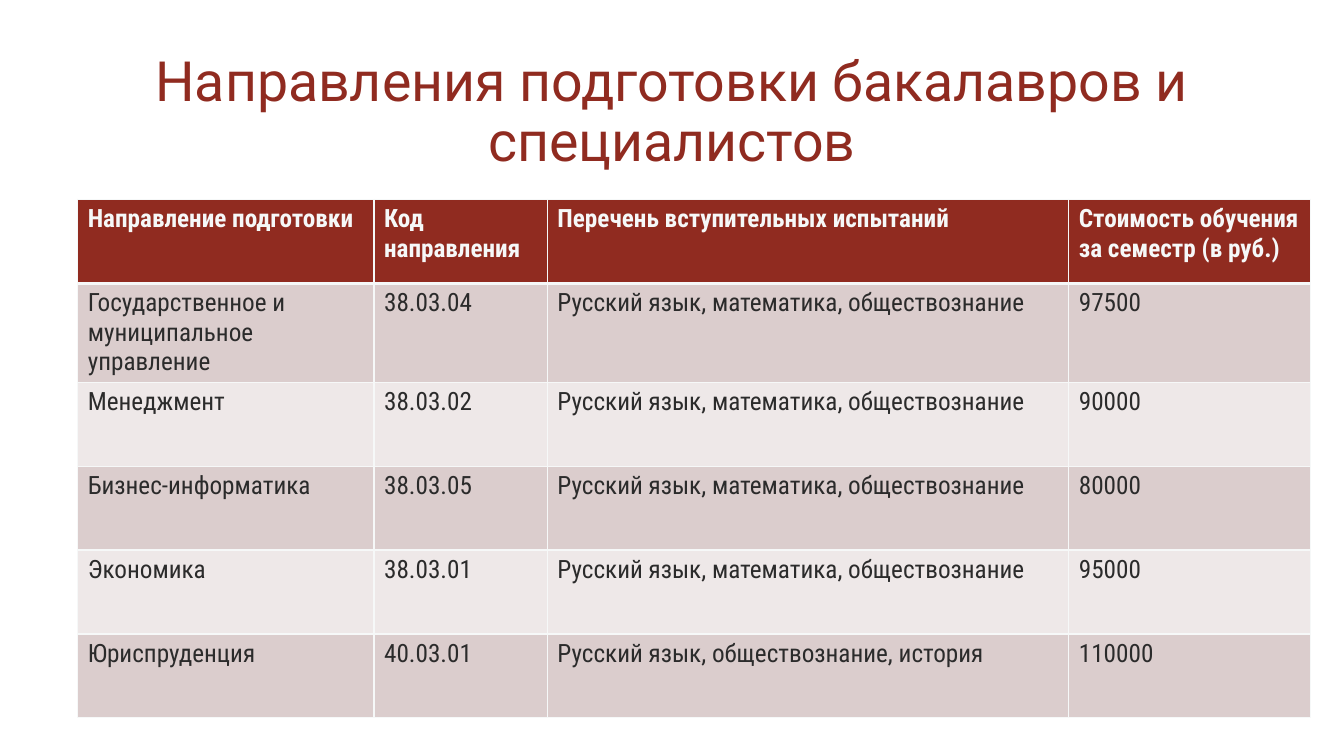
from pptx import Presentation, util as u
from pptx.dml.color import RGBColor
from pptx.enum import text
from pptx.oxml import parse_xml
from pptx.oxml.ns import nsdecls

HUES = {"red": "902B20", "pale": "F6F8F8", "ink": "2B2B2B",
        "rose": "DBCDCD", "mist": "EEE8E8"}

EXAMS = "Русский язык, математика, обществознание"
HEADS = ["Направление подготовки", "Код направления",
         "Перечень вступительных испытаний",
         "Стоимость обучения за семестр (в руб.)"]
ROWS = [
    ["Государственное и муниципальное управление", "38.03.04", EXAMS, "97500"],
    ["Менеджмент", "38.03.02", EXAMS, "90000"],
    ["Бизнес-информатика", "38.03.05", EXAMS, "80000"],
    ["Экономика", "38.03.01", EXAMS, "95000"],
    ["Юриспруденция", "40.03.01", "Русский язык, обществознание, история", "110000"],
]


class Page:
    """Holds the style and the slide; lengths are percent of the slide's size."""

    def __init__(self, deck):
        self.wide, self.high = deck.slide_width, deck.slide_height
        self.slide = deck.slides.add_slide(deck.slide_layouts[5])

    def across(self, share):
        return u.Emu(round(self.wide * share / 100))

    def down(self, share):
        return u.Emu(round(self.high * share / 100))

    def style(self, para, face, size, hue, bold=False):
        font = para.font
        font.name, font.size, font.bold = face, u.Pt(size), bold
        font.color.rgb = RGBColor.from_string(HUES[hue])

    def title(self, words, left, top, width, height):
        box = self.slide.shapes.title
        box.left, box.top = self.across(left), self.down(top)
        box.width, box.height = self.across(width), self.down(height)
        frame = box.text_frame
        frame.text = words
        frame.word_wrap = True
        frame.auto_size = text.MSO_AUTO_SIZE.NONE
        frame.vertical_anchor = text.MSO_ANCHOR.MIDDLE
        frame.margin_left = frame.margin_right = 0
        frame.margin_top = frame.margin_bottom = 0
        para = frame.paragraphs[0]
        para.alignment = text.PP_ALIGN.CENTER
        para.line_spacing = 0.9
        self.style(para, "Roboto", 39.6, "red")

    def edge(self, cell, side, points):
        cell._tc.get_or_add_tcPr().append(parse_xml(
            f'<a:ln{side} {nsdecls("a")} w="{u.Pt(points)}"><a:solidFill>'
            f'<a:srgbClr val="{HUES["pale"]}"/></a:solidFill></a:ln{side}>'))

    def cell(self, cell, words, row):
        head = row == 0
        # Borders come before the fill; the header row has a heavy rule below
        for side in "LRTB":
            heavy = (head and side == "B") or (row == 1 and side == "T")
            self.edge(cell, side, 3 if heavy else 1)
        fill = "red" if head else ("mist", "rose")[row % 2]
        cell.fill.solid()
        cell.fill.fore_color.rgb = RGBColor.from_string(HUES[fill])
        cell.text = words
        self.style(cell.text_frame.paragraphs[0], "Roboto Condensed", 18,
                   "pale" if head else "ink", head)

    def table(self, rows, left, top, widths, height):
        grid = self.slide.shapes.add_table(
            len(rows), len(widths), self.across(left), self.down(top),
            self.across(sum(widths)), self.down(height * len(rows))).table
        for col, width in zip(grid.columns, widths):
            col.width = self.across(width)
        for r, line in enumerate(rows):
            grid.rows[r].height = self.down(height)
            for c, words in enumerate(line):
                self.cell(grid.cell(r, c), words, r)


def main():
    deck = Presentation()
    deck.slide_width, deck.slide_height = u.Inches(13.33), u.Inches(7.5)
    page = Page(deck)
    # Heading
    page.title("Направления подготовки бакалавров и специалистов",
               7.5, 9.07, 85, 11.87)
    # Programmes, exams and fees
    page.table([HEADS] + ROWS, 5.78, 26.4, [22.05, 12.9, 38.8, 18], 11.1)
    deck.save("out.pptx")


if __name__ == "__main__":
    main()
